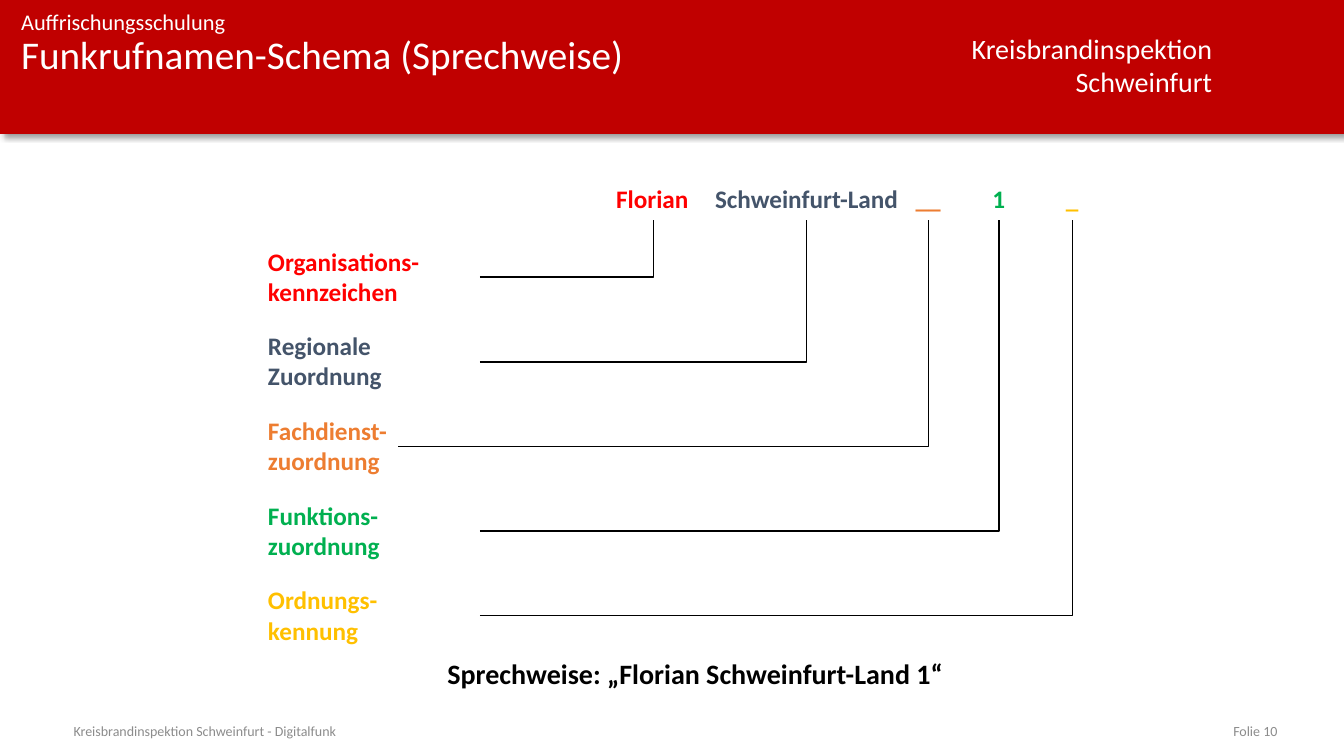
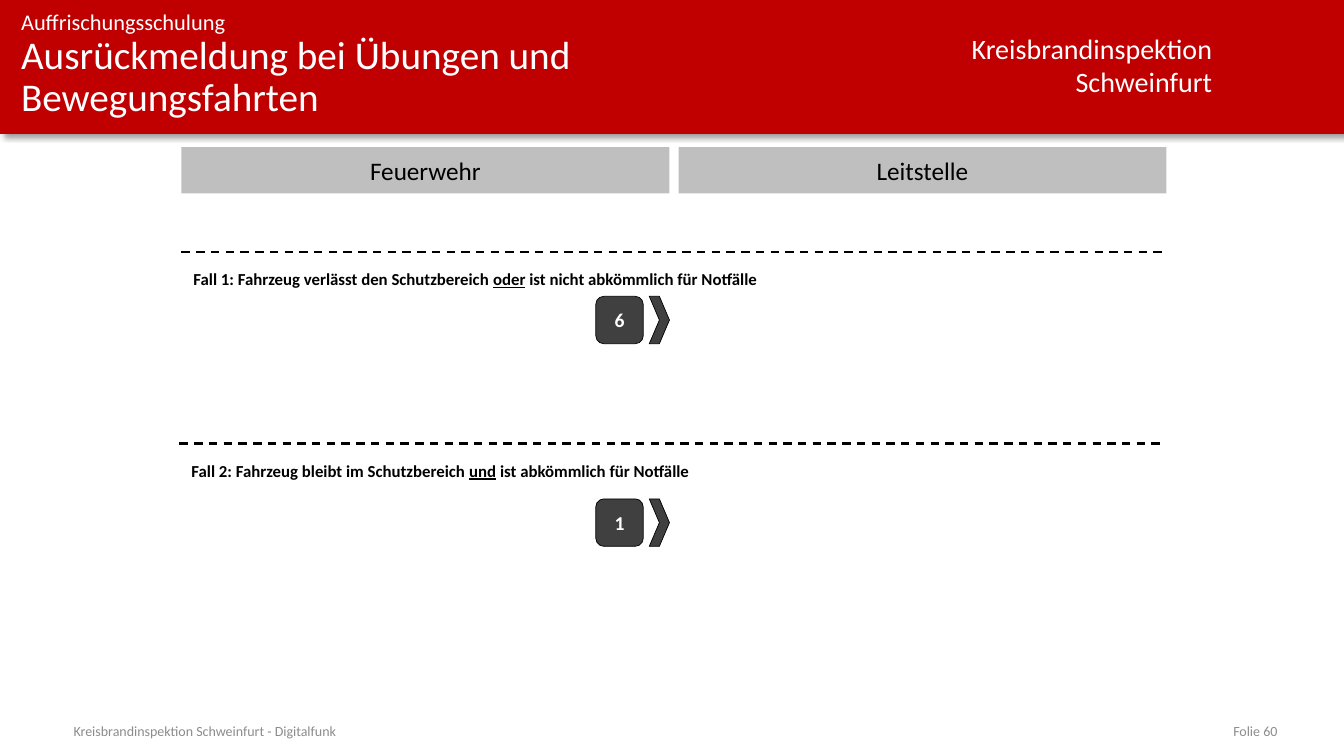
from lxml import etree
from pptx import Presentation
from pptx.dml.color import RGBColor
from pptx.enum import dml, shapes, text
from pptx.oxml.ns import qn
from pptx.util import Inches, Pt

FONT = "Calibri"
BAND, GREY, CHIP = "C00000", "BFBFBF", "404040"
WHITE, BLACK, FOOTER = "FFFFFF", "000000", "8C8C8C"
LEFT, CENTER, RIGHT = (text.PP_ALIGN.LEFT, text.PP_ALIGN.CENTER,
                       text.PP_ALIGN.RIGHT)
TOP, MIDDLE = text.MSO_ANCHOR.TOP, text.MSO_ANCHOR.MIDDLE
INSETS = (0.1, 0.05)
NO_INSETS = (0, 0)
WIDTH, HEIGHT = 13.33, 7.5

# call sign part, left, width, label lines, colour, line start, line end
CALL_SIGN = [
    ("Florian", 6.01, 0.92, ["Organisations-", "kennzeichen"],
     "FF0000", 4.76, 6.48),
    ("Schweinfurt-Land", 6.98, 2.04, ["Regionale", "Zuordnung"],
     "44546A", 4.76, 8),
    ("__", 8.98, 0.45, ["Fachdienst-", "zuordnung"],
     "ED7D31", 3.95, 9.21),
    ("1", 9.74, 0.33, ["Funktions-", "zuordnung"],
     "00B050", 4.76, 9.91),
    ("_", 10.47, 0.33, ["Ordnungs-", "kennung"],
     "FFC000", 4.76, 10.64),
]
ROW_STEP = 0.84

# left, divider top, chip top, chip text, spans before, under and after the line
CASES = [
    (1.8, 2.5, 2.94, "6", ["Fall 1: Fahrzeug verlässt den Schutzbereich ",
                           "oder", " ist nicht abkömmlich für Notfälle"]),
    (1.78, 4.4, 4.95, "1", ["Fall 2: Fahrzeug bleibt im Schutzbereich ",
                            "und", " ist abkömmlich für Notfälle"]),
]


def color(value):
    return RGBColor.from_string(value)


def write(shape, paragraphs, size, ink, align=LEFT, anchor=TOP, bold=False,
          insets=INSETS, wrap=True, spacing=None):
    """Fill a shape with paragraphs, each a list of (text, underlined) spans."""
    frame = shape.text_frame
    frame.word_wrap = wrap
    frame.vertical_anchor = anchor
    frame.margin_left = frame.margin_right = Inches(insets[0])
    frame.margin_top = frame.margin_bottom = Inches(insets[1])
    for index, spans in enumerate(paragraphs):
        para = frame.add_paragraph() if index else frame.paragraphs[0]
        para.alignment = align
        if spacing:
            para.line_spacing = spacing
        for words, underlined in spans:
            span = para.add_run()
            span.text = words
            font = span.font
            font.name, font.size, font.bold = FONT, Pt(size), bold
            font.color.rgb = color(ink)
            if underlined:
                font.underline = True


def plain(*lines):
    return [[(line, False)] for line in lines]


def add_text(page, at, paragraphs, size, ink, **style):
    box = page.shapes.add_textbox(*map(Inches, at))
    write(box, paragraphs, size, ink, **style)


def add_block(page, kind, at, fill, outline=None):
    block = page.shapes.add_shape(kind, *map(Inches, at))
    block.shadow.inherit = False
    block.fill.solid()
    block.fill.fore_color.rgb = color(fill)
    if outline:
        block.line.color.rgb = color(outline)
        block.line.width = Pt(0.5)
    else:
        block.line.fill.background()
    return block


def add_line(page, start, end, width, kind=shapes.MSO_CONNECTOR.STRAIGHT):
    line = page.shapes.add_connector(kind, *map(Inches, (*start, *end)))
    line.line.color.rgb = color(BLACK)
    line.line.width = Pt(width)
    etree.SubElement(line._element.spPr, qn("a:effectLst"))
    return line


def add_corner(page, start, end):
    """Draw a line that runs sideways, then turns once up to its end."""
    line = add_line(page, start, end, 1, shapes.MSO_CONNECTOR.ELBOW)
    line._element.spPr.find(qn("a:prstGeom")).set("prst", "bentConnector2")


def add_drop_shadow(shape):
    effects = shape._element.spPr.find(qn("a:effectLst"))
    shadow = etree.SubElement(
        effects, qn("a:outerShdw"), blurRad=str(Pt(4)), dist=str(Pt(3)),
        dir=str(45 * 60000), algn="tl", rotWithShape="0")
    tint = etree.SubElement(shadow, qn("a:srgbClr"), val=BLACK)
    etree.SubElement(tint, qn("a:alpha"), val="40000")


def add_page(deck, title, number):
    """Add a slide with the shared band, title and footer."""
    page = deck.slides.add_slide(deck.slide_layouts[6])
    band = add_block(page, shapes.MSO_SHAPE.RECTANGLE,
                     (0, 0, WIDTH, 1.33), BAND)
    add_drop_shadow(band)
    add_text(page, (8.64, 0.26, 3.48, 0.77),
             plain("Kreisbrandinspektion", "Schweinfurt"), 20, WHITE,
             align=RIGHT)
    add_text(page, (0.21, 0.08, 8.43, 0.27), plain("Auffrischungsschulung"),
             16, WHITE, insets=NO_INSETS)
    add_text(page, (0.21, 0.35, 8.43, 0.99), plain(title), 28, WHITE,
             insets=NO_INSETS, spacing=0.9)
    footer = dict(anchor=MIDDLE, insets=NO_INSETS)
    add_text(page, (0.73, 7.15, 8.05, 0.2),
             plain("Kreisbrandinspektion Schweinfurt - Digitalfunk"),
             10, FOOTER, **footer)
    add_text(page, (9.56, 7.15, 3.11, 0.2), plain(f"Folie {number}"),
             10, FOOTER, align=RIGHT, **footer)
    return page


def add_call_sign(page):
    for row, (part, left, width, label, ink, start, end) in enumerate(CALL_SIGN):
        offset = row * ROW_STEP
        add_text(page, (left, 1.77, width, 0.4), plain(part), 18, ink,
                 align=CENTER, anchor=MIDDLE, bold=True, wrap=False)
        add_text(page, (2.56, 2.39 + offset, 2.2, 0.71), plain(*label),
                 18, ink, bold=True)
        add_corner(page, (start, 2.75 + offset), (end, 2.18))
    add_text(page, (4.34, 6.46, 5.17, 0.44),
             plain("Sprechweise: „Florian Schweinfurt-Land 1“"),
             20, BLACK, bold=True)


def add_column_heads(page):
    for column, head in enumerate(["Feuerwehr", "Leitstelle"]):
        bar = add_block(page, shapes.MSO_SHAPE.RECTANGLE,
                        (1.8 + column * 4.93, 1.46, 4.84, 0.46), GREY)
        write(bar, plain(head), 18, BLACK, align=CENTER, anchor=MIDDLE,
              insets=(0.08, 0.08), wrap=False)


def add_status(page, top, status):
    """Add a status key with the chevron that sends it to the right."""
    key = add_block(page, shapes.MSO_SHAPE.ROUNDED_RECTANGLE,
                    (5.91, top, 0.47, 0.47), CHIP, BLACK)
    write(key, plain(status), 14, WHITE, align=CENTER, anchor=MIDDLE, bold=True)
    add_block(page, shapes.MSO_SHAPE.CHEVRON, (6.44, top, 0.2, 0.47),
              CHIP, BLACK)


def add_case(page, left, top, status_top, status, spans):
    divider = add_line(page, (left, top), (left + 9.77, top), 1.5)
    divider.line.dash_style = dml.MSO_LINE.DASH
    before, stressed, after = spans
    add_text(page, (left + 0.02, top + 0.12, 5.81, 0.3),
             [[(before, False), (stressed, True), (after, False)]],
             12, BLACK, bold=True)
    add_status(page, status_top, status)


def main():
    deck = Presentation()
    deck.slide_width, deck.slide_height = Inches(WIDTH), Inches(HEIGHT)

    add_call_sign(add_page(deck, "Funkrufnamen-Schema (Sprechweise)", 10))

    page = add_page(deck, "Ausrückmeldung bei Übungen und Bewegungsfahrten", 60)
    add_column_heads(page)
    for case in CASES:
        add_case(page, *case)

    deck.save("out.pptx")


if __name__ == "__main__":
    main()
